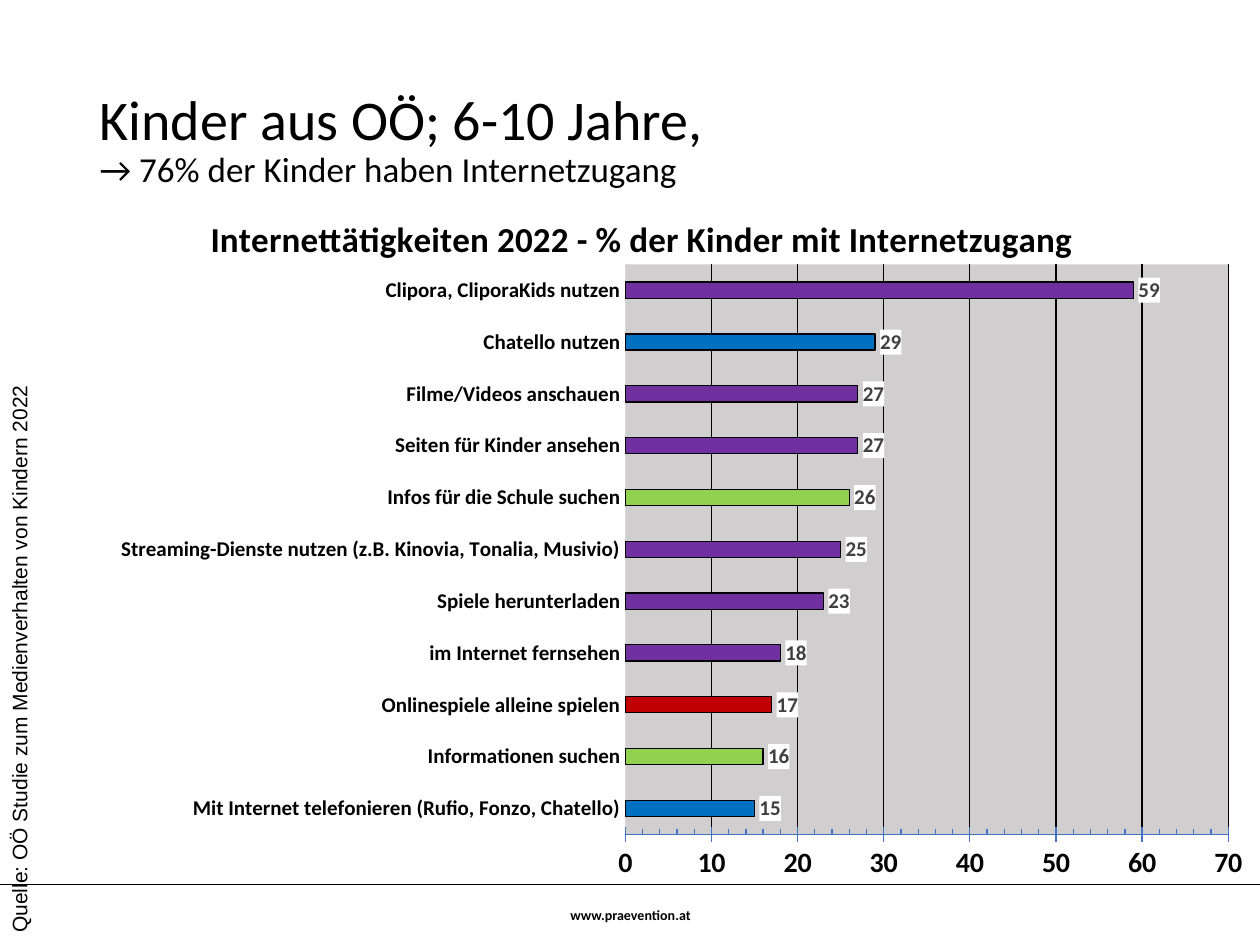
"""Build the slide on children's internet activities with a bar chart."""
from dataclasses import dataclass

from lxml.etree import SubElement
from pptx import Presentation
from pptx.chart.data import CategoryChartData
from pptx.dml.color import RGBColor
from pptx.enum.chart import XL_CHART_TYPE, XL_LABEL_POSITION, XL_TICK_MARK
from pptx.enum.text import MSO_ANCHOR, MSO_AUTO_SIZE, PP_ALIGN
from pptx.oxml import parse_xml
from pptx.oxml.ns import nsdecls, qn
from pptx.util import Emu, Inches, Pt

WIDTH, HEIGHT = Inches(10), Inches(7.5)
COLORS = {
    "text": "000000", "label": "404040", "plot": "D0CECE", "paper": "FFFFFF",
    "category_axis": "D9D9D9", "value_axis": "4472C4",
    "media": "7030A0", "contact": "0070C0", "info": "92D050", "game": "C00000",
}


@dataclass(frozen=True)
class Area:
    """A rectangle in shares of the slide's size."""
    x: float
    y: float
    w: float
    h: float

    def emu(self) -> tuple[Emu, ...]:
        return tuple(Emu(round(share * size)) for share, size in
                     zip((self.x, self.y, self.w, self.h), (WIDTH, HEIGHT) * 2))


@dataclass(frozen=True)
class Activity:
    """One bar of the chart."""
    name: str
    percent: int
    kind: str = "media"


@dataclass(frozen=True)
class Label:
    """A text box with a single run."""
    text: str
    area: Area
    size: int
    font: str
    bold: bool = False
    wrap: bool = True
    rotation: int = 0
    align: PP_ALIGN = PP_ALIGN.LEFT


ACTIVITIES = [
    Activity("Mit Internet telefonieren (Rufio, Fonzo, Chatello)", 15, "contact"),
    Activity("Informationen suchen", 16, "info"),
    Activity("Onlinespiele alleine spielen", 17, "game"),
    Activity("im Internet fernsehen", 18),
    Activity("Spiele herunterladen", 23),
    Activity("Streaming-Dienste nutzen (z.B. Kinovia, Tonalia, Musivio)", 25),
    Activity("Infos für die Schule suchen", 26, "info"),
    Activity("Seiten für Kinder ansehen", 27),
    Activity("Filme/Videos anschauen", 27),
    Activity("Chatello nutzen", 29, "contact"),
    Activity("Clipora, CliporaKids nutzen", 59),
]
LABELS = [
    Label("www.praevention.at", Area(0.388, 0.948, 0.225, 0.04), 8, "Calibri",
          bold=True, align=PP_ALIGN.CENTER),
    Label("Quelle: OÖ Studie zum Medienverhalten von Kindern 2022",
          Area(-0.214, 0.675, 0.458, 0.04), 12, "Arial", wrap=False, rotation=270),
]


def rgb(key: str) -> RGBColor:
    return RGBColor.from_string(COLORS[key])


def style_font(font, size: int, name: str = "Calibri", bold: bool = False,
               color: str = "text") -> None:
    for attr, value in {"size": Pt(size), "name": name, "bold": bold}.items():
        setattr(font, attr, value)
    font.color.rgb = rgb(color)


def style_line(line, color: str, width: float = 0.75) -> None:
    line.color.rgb = rgb(color)
    line.width = Pt(width)


def solid_fill(color: str):
    return parse_xml(f'<c:spPr {nsdecls("c", "a")}><a:solidFill>'
                     f'<a:srgbClr val="{COLORS[color]}"/></a:solidFill></c:spPr>')


def manual_layout(inner: bool = False, **shares: float):
    modes = "".join(f'<c:{axis}Mode val="edge"/>' for axis in "xy")
    values = "".join(f'<c:{key} val="{share}"/>' for key, share in shares.items())
    target = '<c:layoutTarget val="inner"/>' if inner else ""
    return parse_xml(f'<c:layout {nsdecls("c")}><c:manualLayout>{target}{modes}{values}'
                     '</c:manualLayout></c:layout>')


def add_title(s) -> None:
    title = s.shapes.title
    box = Area(0.069, 0.053, 0.862, 0.193).emu()
    for attr, value in zip(("left", "top", "width", "height"), box):
        setattr(title, attr, value)
    tf = title.text_frame
    for attr, value in {"vertical_anchor": MSO_ANCHOR.MIDDLE, "word_wrap": True,
                        "auto_size": MSO_AUTO_SIZE.NONE}.items():
        setattr(tf, attr, value)
    p = tf.paragraphs[0]
    p.alignment, p.line_spacing = PP_ALIGN.LEFT, 0.9
    for text, size in (("Kinder aus OÖ; 6-10 Jahre,", 32),
                       ("→ 76% der Kinder haben Internetzugang", 20)):
        if p.runs:
            p.add_line_break()
        r = p.add_run()
        r.text = text
        style_font(r.font, size)


def add_label(s, label: Label) -> None:
    sp = s.shapes.add_textbox(*label.area.emu())
    sp.rotation = label.rotation
    tf = sp.text_frame
    tf.word_wrap, tf.vertical_anchor = label.wrap, MSO_ANCHOR.MIDDLE
    p = tf.paragraphs[0]
    p.alignment = label.align
    r = p.add_run()
    r.text = label.text
    style_font(r.font, label.size, label.font, label.bold)


def add_footer_rule(s) -> None:
    y = round(HEIGHT * 0.936)
    rule = s.shapes.add_connector(1, 0, y, WIDTH, y)
    style_line(rule.line, "text", 1)
    SubElement(rule._element.spPr, qn("a:effectLst"))


def style_axes(chart) -> None:
    cat, val = chart.category_axis, chart.value_axis
    for axis, size, color, values in (
        (cat, 12, "category_axis", {"major_tick_mark": XL_TICK_MARK.NONE}),
        (val, 16, "value_axis", {
            "major_tick_mark": XL_TICK_MARK.CROSS, "minor_tick_mark": XL_TICK_MARK.INSIDE,
            "minimum_scale": 0, "maximum_scale": 70, "major_unit": 10, "minor_unit": 2,
            "has_major_gridlines": True}),
    ):
        for attr, value in values.items():
            setattr(axis, attr, value)
        style_font(axis.tick_labels.font, size, bold=True)
        style_line(axis.format.line, color)
    style_line(val.major_gridlines.format.line, "text")


def style_bars(plot) -> None:
    plot.gap_width, plot.vary_by_categories = 219, False
    series = plot.series[0]
    bars = [(series, "media")] + [(series.points[i], a.kind)
                                  for i, a in enumerate(ACTIVITIES) if a.kind != "media"]
    for bar, kind in bars:
        bar.format.fill.solid()
        bar.format.fill.fore_color.rgb = rgb(kind)
        style_line(bar.format.line, "text")
    labels = series.data_labels
    labels.show_value, labels.position = True, XL_LABEL_POSITION.OUTSIDE_END
    style_font(labels.font, 12, bold=True, color="label")
    labels._element.find(qn("c:txPr")).addprevious(solid_fill("paper"))


def add_activity_chart(s) -> None:
    data = CategoryChartData()
    data.categories = [a.name for a in ACTIVITIES]
    data.add_series("Series 1", [a.percent for a in ACTIVITIES])
    area = Area(0.069, 0.213, 0.931, 0.733)
    chart = s.shapes.add_chart(XL_CHART_TYPE.BAR_CLUSTERED, *area.emu(), data).chart
    style_font(chart.font, 10)
    chart.has_legend, chart.has_title = False, True
    p = chart.chart_title.text_frame.paragraphs[0]
    r = p.add_run()
    r.text = "Internettätigkeiten 2022 - % der Kinder mit Internetzugang"
    style_font(r.font, 20, bold=True)
    title = chart.chart_title._element
    plot_area = chart.plots[0]._element.getparent()
    for parent in (title, plot_area):
        for layout in parent.findall(qn("c:layout")):
            parent.remove(layout)
    title.find(qn("c:tx")).addnext(manual_layout(x=0.1, y=0.01))
    plot_area.insert(0, manual_layout(True, x=0.459, y=0.091, w=0.514, h=0.823))
    plot_area.append(solid_fill("plot"))
    style_axes(chart)
    style_bars(chart.plots[0])


def main() -> None:
    prs = Presentation()
    prs.slide_width, prs.slide_height = WIDTH, HEIGHT
    s = prs.slides.add_slide(prs.slide_layouts[5])
    add_footer_rule(s)
    add_title(s)
    for label in LABELS:
        add_label(s, label)
    add_activity_chart(s)
    prs.save("out.pptx")


if __name__ == "__main__":
    main()
